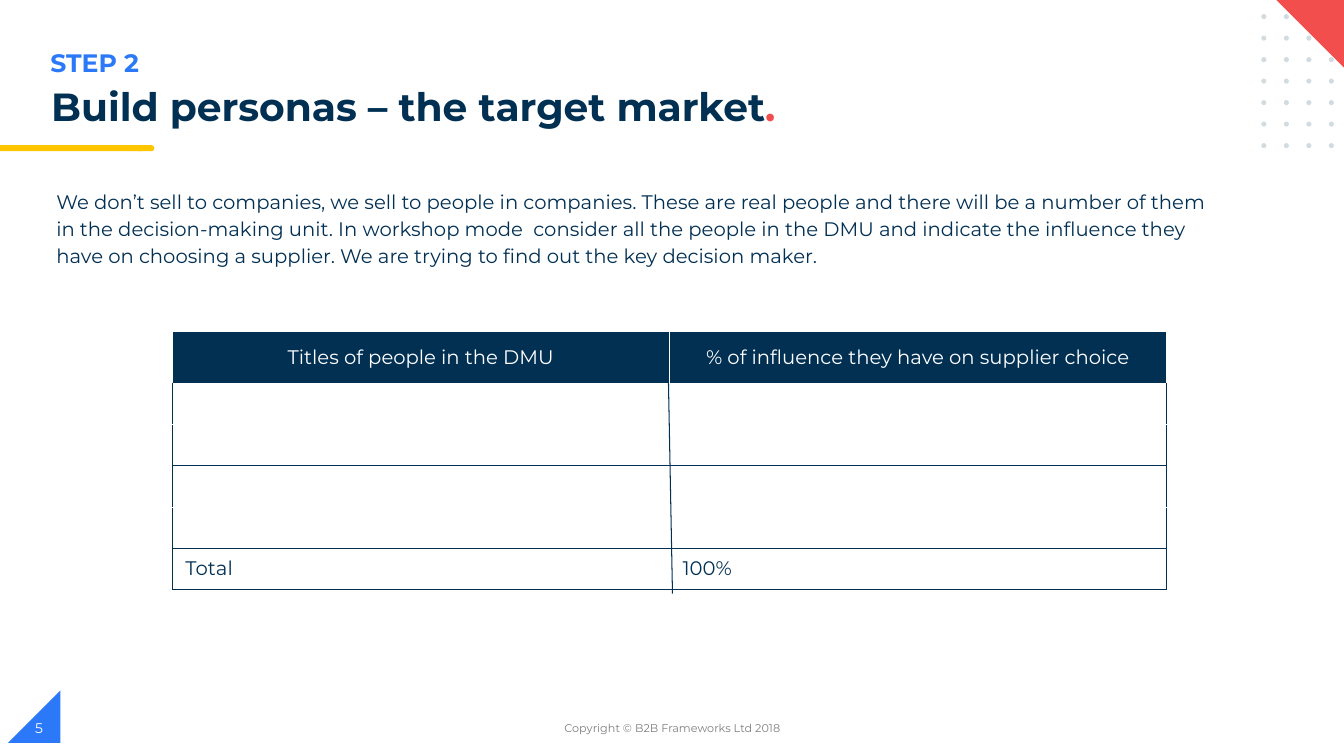
"""Build the "Step 2: Build personas" slide with its decision-making unit table."""
from dataclasses import dataclass

from lxml import etree
from pptx import Presentation
from pptx.dml.color import RGBColor
from pptx.enum.shapes import MSO_CONNECTOR, MSO_SHAPE
from pptx.enum.text import MSO_ANCHOR, PP_ALIGN
from pptx.oxml.ns import qn
from pptx.slide import Slide
from pptx.table import _Cell
from pptx.util import Inches, Pt

NAVY = RGBColor(0x02, 0x30, 0x53)
BLUE = RGBColor(0x2B, 0x79, 0xF8)
YELLOW = RGBColor(0xFF, 0xC6, 0x00)
RED = RGBColor(0xF2, 0x4E, 0x4E)
PALE = RGBColor(0xD1, 0xDB, 0xE0)
GREY = RGBColor(0x7F, 0x7F, 0x7F)
WHITE = RGBColor(0xFF, 0xFF, 0xFF)

TRIANGLE = MSO_SHAPE.RIGHT_TRIANGLE
TERMINATOR = MSO_SHAPE.FLOWCHART_TERMINATOR
RECTANGLE = MSO_SHAPE.RECTANGLE
OVAL = MSO_SHAPE.OVAL
STRAIGHT = MSO_CONNECTOR.STRAIGHT
LEFT, CENTER = PP_ALIGN.LEFT, PP_ALIGN.CENTER
TOP, MIDDLE = MSO_ANCHOR.TOP, MSO_ANCHOR.MIDDLE

FONT = "Montserrat"
BORDER_WIDTH = Pt(0.75)


@dataclass(frozen=True)
class Decoration:
    kind: MSO_SHAPE
    left: float
    top: float
    width: float
    height: float
    color: RGBColor
    rotation: float = 0


@dataclass(frozen=True)
class Run:
    text: str
    color: RGBColor


@dataclass(frozen=True)
class Label:
    left: float
    top: float
    width: float
    height: float
    runs: tuple[Run, ...]
    size: float
    bold: bool = False
    align: PP_ALIGN = LEFT
    anchor: MSO_ANCHOR = TOP
    line_spacing: float = 1.0


DOTS = [
    Decoration(OVAL, 12.51 + 0.67 * column / 3, 0.14 + 1.28 * row / 6, 0.05, 0.05, PALE)
    for row in range(7)
    for column in range(4)
]
DECORATIONS = [
    Decoration(TRIANGLE, 0.08, 6.85, 0.52, 0.52, BLUE, 270),
    Decoration(TERMINATOR, 1.34, 1.44, 0.19, 0.06, YELLOW),
    Decoration(RECTANGLE, 0, 1.44, 1.41, 0.06, YELLOW),
    *DOTS,
    Decoration(TRIANGLE, 12.65, -0.01, 0.72, 0.72, RED, 180),
]

INTRODUCTION = (
    "We don’t sell to companies, we sell to people in companies. These are real people "
    "and there will be a number of them in the decision-making unit. In workshop mode  "
    "consider all the people in the DMU and indicate the influence they have on choosing "
    "a supplier. We are trying to find out the key decision maker."
)
LABELS = [
    Label(0.46, 1.8, 11.75, 0.88, (Run(INTRODUCTION, NAVY),), 14, line_spacing=1.15),
    Label(0.41, 0.82, 9.18, 0.56,
          (Run("Build personas – the target market", NAVY), Run(".", RED)),
          28, bold=True, line_spacing=0.9),
    Label(4.42, 7.02, 4.5, 0.4, (Run("Copyright © B2B Frameworks Ltd 2018", GREY),),
          8, align=CENTER, anchor=MIDDLE),
    Label(0.25, 7.02, 3, 0.4, (Run("5", WHITE),), 10, anchor=MIDDLE),
    Label(0.4, 0.42, 1.39, 0.4, (Run("STEP 2", BLUE),), 18, bold=True),
]

HEADINGS = ("Titles of people in the DMU", "% of influence they have on supplier choice")
TOTALS = ("Total", "100%")
ROW_HEIGHTS = (0.51, 0.41, 0.41, 0.41, 0.41, 0.41)
COLUMN_WIDTH = 4.93
RULED_EDGES = (3, 5, 6)


def draw_decoration(slide: Slide, item: Decoration) -> None:
    shape = slide.shapes.add_shape(item.kind, Inches(item.left), Inches(item.top),
                                   Inches(item.width), Inches(item.height))
    shape.shadow.inherit = False
    shape.fill.solid()
    shape.fill.fore_color.rgb = item.color
    shape.line.fill.background()
    shape.rotation = item.rotation


def draw_label(slide: Slide, label: Label) -> None:
    box = slide.shapes.add_textbox(Inches(label.left), Inches(label.top),
                                   Inches(label.width), Inches(label.height))
    frame = box.text_frame
    frame.word_wrap = True
    frame.vertical_anchor = label.anchor
    paragraph = frame.paragraphs[0]
    paragraph.alignment = label.align
    paragraph.line_spacing = label.line_spacing
    for part in label.runs:
        run = paragraph.add_run()
        run.text = part.text
        run.font.name = FONT
        run.font.size = Pt(label.size)
        run.font.bold = label.bold
        run.font.color.rgb = part.color


def write_cell(cell: _Cell, text: str, color: RGBColor, align: PP_ALIGN) -> None:
    cell.text_frame.text = text
    cell.vertical_anchor = MIDDLE
    cell.margin_left = cell.margin_right = Inches(0.13)
    paragraph = cell.text_frame.paragraphs[0]
    paragraph.alignment = align
    font = paragraph.runs[0].font
    font.name = FONT
    font.size = Pt(14)
    font.color.rgb = color


def set_borders(cell: _Cell, left: RGBColor, right: RGBColor,
                top: RGBColor, bottom: RGBColor) -> None:
    properties = cell._tc.get_or_add_tcPr()
    sides = (("a:lnL", left), ("a:lnR", right), ("a:lnT", top), ("a:lnB", bottom))
    for position, (tag, color) in enumerate(sides):
        line = etree.Element(qn(tag), w=str(BORDER_WIDTH))
        fill = etree.SubElement(line, qn("a:solidFill"))
        etree.SubElement(fill, qn("a:srgbClr"), val=str(color))
        properties.insert(position, line)


def edge_color(edge: int) -> RGBColor:
    return NAVY if edge in RULED_EDGES else WHITE


def draw_table(slide: Slide) -> None:
    frame = slide.shapes.add_table(len(ROW_HEIGHTS), len(HEADINGS), Inches(1.71), Inches(3.29),
                                   Inches(COLUMN_WIDTH * len(HEADINGS)),
                                   Inches(sum(ROW_HEIGHTS)))
    table = frame.table
    table.first_row = False
    table.horz_banding = False
    for row, height in zip(table.rows, ROW_HEIGHTS):
        row.height = Inches(height)
    for column, (heading, total) in enumerate(zip(HEADINGS, TOTALS)):
        header = table.cell(0, column)
        write_cell(header, heading, WHITE, CENTER)
        header.fill.solid()
        header.fill.fore_color.rgb = NAVY
        set_borders(header, WHITE, WHITE, WHITE, WHITE)
        left, right = (NAVY, WHITE) if column == 0 else (WHITE, NAVY)
        for row in range(1, len(ROW_HEIGHTS)):
            cell = table.cell(row, column)
            cell.fill.background()
            set_borders(cell, left, right, edge_color(row), edge_color(row + 1))
        write_cell(table.cell(len(ROW_HEIGHTS) - 1, column), total, NAVY, LEFT)


def draw_divider(slide: Slide) -> None:
    divider = slide.shapes.add_connector(STRAIGHT, Inches(6.63), Inches(3.8),
                                         Inches(6.67), Inches(5.89))
    divider.line.color.rgb = NAVY
    divider.line.width = BORDER_WIDTH
    etree.SubElement(divider._element.spPr, qn("a:effectLst"))


def main() -> None:
    presentation = Presentation()
    presentation.slide_width = Inches(13.33)
    presentation.slide_height = Inches(7.5)
    slide = presentation.slides.add_slide(presentation.slide_layouts[6])
    for item in DECORATIONS:
        draw_decoration(slide, item)
    draw_table(slide)
    draw_divider(slide)
    for label in LABELS:
        draw_label(slide, label)
    presentation.save("out.pptx")


if __name__ == "__main__":
    main()
